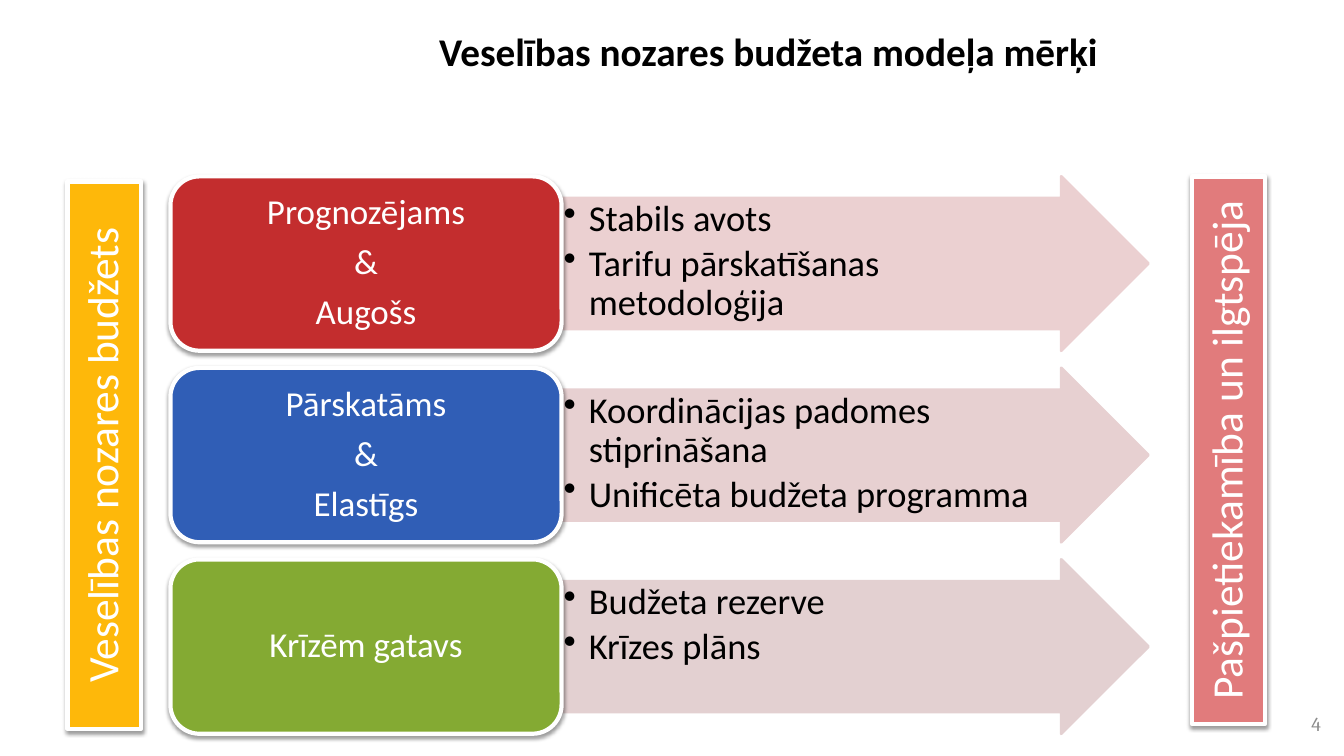
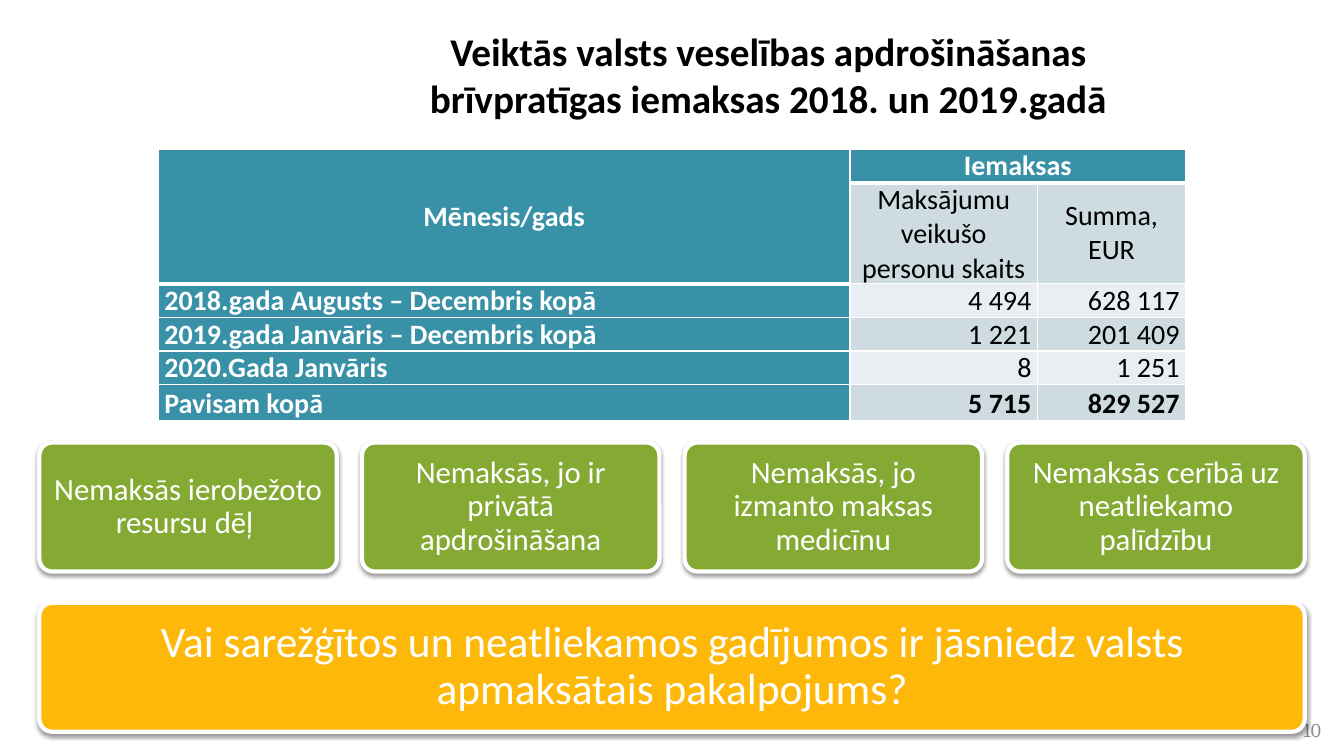
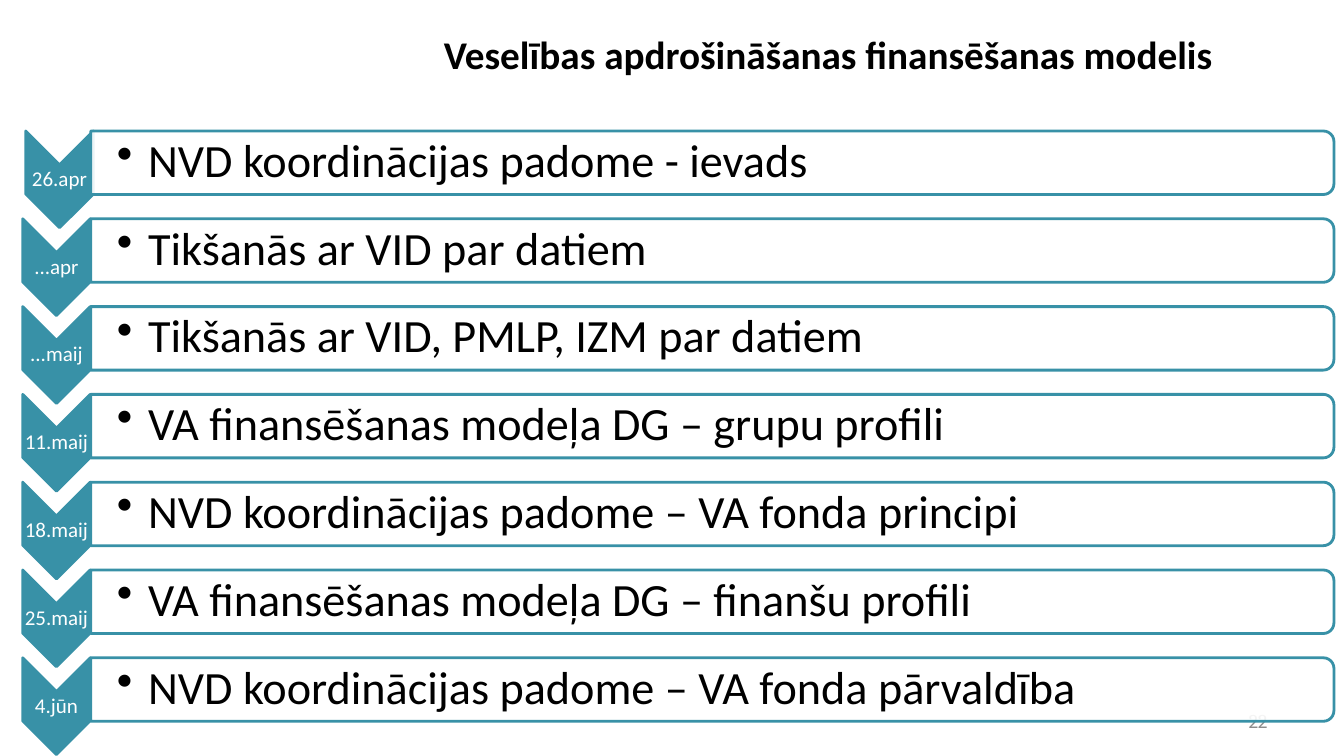
import pptx
import pptx.util
import pptx.dml.color
import pptx.enum.shapes
import pptx.enum.text
import pptx.oxml
import pptx.oxml.ns

Pt = pptx.util.Pt
KIND = pptx.enum.shapes.MSO_SHAPE
SIDE = pptx.enum.text.PP_ALIGN
HOLD = pptx.enum.text.MSO_ANCHOR
HUES = {
    "white": "FFFFFF", "black": "000000", "gray": "8C8C8C",
    "red": "C32D2E", "blue": "305EB6", "green": "84AA33",
    "gold": "FEB80A", "rose": "E17B7C", "teal": "3891A7",
    "mist": "CEDCE1", "pale": "E8EEF1",
    "blush": "EBD0D1", "dusk": "E7D0D1", "haze": "E3D0D1",
}
WIDE, HIGH, ROWS = 13.33, 7.5, 75


def cells(count):
    return pptx.util.Inches(count * HIGH / ROWS)


def hue(name):
    return pptx.dml.color.RGBColor.from_string(HUES[name])


def node(tag, parent, **attrs):
    item = pptx.oxml.parse_xml(f"<a:{tag} {pptx.oxml.ns.nsdecls('a')}/>")
    for key, value in attrs.items():
        item.set(key, str(value))
    if parent is not None:
        parent.append(item)
    return item


def write(frame, text, size=20, color="black", bold=False, face="Calibri",
          align=SIDE.LEFT, anchor=HOLD.TOP, pad=(1, 0.5, 1, 0.5),
          line=None, after=0, hang=0):
    frame.word_wrap = True
    frame.vertical_anchor = anchor
    frame.margin_left, frame.margin_top, frame.margin_right, frame.margin_bottom = map(cells, pad)
    for rank, part in enumerate(text.split("\n")):
        para = frame.add_paragraph() if rank else frame.paragraphs[0]
        if hang:
            prop = para._p.get_or_add_pPr()
            prop.set("marL", str(cells(hang)))
            prop.set("indent", str(-cells(hang)))
            node("buChar", prop, char="•")
        para.alignment = align
        if line:
            para.line_spacing = line
        if after:
            para.space_after = Pt(size * after)
        run = para.add_run()
        run.text = part
        run.font.size, run.font.bold, run.font.name = Pt(size), bold, face
        run.font.color.rgb = hue(color)


class Deck:
    label = dict(color="white", align=SIDE.CENTER, anchor=HOLD.MIDDLE, line=0.9, after=0.35)
    points = dict(line=0.9, after=0.15)

    def __init__(self):
        self.show = pptx.Presentation()
        self.show.slide_width = pptx.util.Inches(WIDE)
        self.show.slide_height = pptx.util.Inches(HIGH)
        self.slide = None

    def start(self):
        self.slide = self.show.slides.add_slide(self.show.slide_layouts[6])

    def text(self, box, words, **form):
        area = self.slide.shapes.add_textbox(*map(cells, box))
        write(area.text_frame, words, **form)

    def title(self, words, box=(34.2, 2.2, 84, 10.4)):
        self.text(box, words, size=28, bold=True, align=SIDE.CENTER)

    def number(self, words, left, top):
        self.text((left, top, 31.1, 4), words, size=14, color="gray", face="Cambria",
                  align=SIDE.RIGHT, anchor=HOLD.MIDDLE)

    def shape(self, kind, box, fill, edge, width=2, turn=0, adjust=(), clear=None):
        left, top, wide, high = box
        if turn:
            left, top = left + (wide - high) / 2, top + (high - wide) / 2
            wide, high = high, wide
        item = self.slide.shapes.add_shape(kind, *map(cells, (left, top, wide, high)))
        item.rotation = turn
        for rank, value in enumerate(adjust):
            item.adjustments[rank] = value
        item.shadow.inherit = False
        item.fill.solid()
        item.fill.fore_color.rgb = hue(fill)
        if clear:
            tone = item._element.spPr.find(".//" + pptx.oxml.ns.qn("a:srgbClr"))
            node("alpha", tone, val=clear * 1000)
        item.line.color.rgb = hue(edge)
        item.line.width = Pt(width)
        return item

    def card(self, kind, box, fill, words, size, pad, turn=0, adjust=()):
        item = self.shape(kind, box, fill, "white", 3, turn, adjust)
        glow = item._element.spPr.find(pptx.oxml.ns.qn("a:effectLst"))
        cast = node("outerShdw", glow, blurRad=Pt(3.1), dist=Pt(1.6), dir=5400000, rotWithShape=0)
        node("alpha", node("srgbClr", cast, val=HUES["black"]), val=38000)
        write(item.text_frame, words, size=size, pad=pad, **self.label)

    def arrow(self, box, fill, words):
        item = self.shape(KIND.RIGHT_ARROW, box, fill, fill, adjust=(0.75, 0.5))
        write(item.text_frame, words, size=26, pad=(0.2, 0.2, 4.5, 0.2), hang=2.5, **self.points)

    def step(self, left, top, date, words):
        self.shape(KIND.CHEVRON, (left, top, 6.7, 9.6), "teal", "teal", turn=90)
        self.text((left, top + 3.35, 6.7, 2.9), date, size=15, pad=(0.1,) * 4, **self.label)
        self.shape(KIND.ROUND_2_SAME_RECTANGLE, (9, top, 123.3, 6.3), "white", "teal",
                   turn=90, clear=90)
        self.text((9, top + 0.3, 123, 5.6), words, size=33, anchor=HOLD.MIDDLE,
                  pad=(2.6, 0.2, 0.2, 0.2), hang=3.1, **self.points)

    def border(self, cell, low):
        prop = cell._tc.get_or_add_tcPr()
        for rank, (side, width) in enumerate(zip("LRTB", (1, 1, 1, low))):
            edge = node("ln" + side, None, w=Pt(width))
            node("srgbClr", node("solidFill", edge), val=HUES["white"])
            prop.insert(rank, edge)

    def table(self, box, wides, highs, rows):
        grid = self.slide.shapes.add_table(len(highs), len(wides), *map(cells, box)).table
        grid.first_row = grid.horz_banding = False
        for column, wide in zip(grid.columns, wides):
            column.width = cells(wide)
        for row, high in zip(grid.rows, highs):
            row.height = cells(high)
        grid.cell(0, 0).merge(grid.cell(1, 0))
        grid.cell(0, 1).merge(grid.cell(0, 2))
        last = len(rows) - 1
        for down, row in enumerate(rows):
            for over, words in enumerate(row):
                cell = grid.cell(down, over)
                head = down == 0 or over == 0
                fill = "teal" if head else "mist" if down % 2 else "pale"
                cell.fill.solid()
                cell.fill.fore_color.rgb = hue(fill)
                self.border(cell, 3 if down == 0 or (down, over) == (1, 0) else 1)
                middle = down == 1 or (down, over) == (0, 0)
                cell.vertical_anchor = HOLD.MIDDLE if middle else HOLD.BOTTOM
                cell.margin_left = cell.margin_right = cells(0.6)
                cell.margin_top = cell.margin_bottom = 0
                if words:
                    align = SIDE.CENTER if down < 2 else SIDE.RIGHT if over else SIDE.LEFT
                    write(cell.text_frame, words, color="white" if head else "black",
                          bold=head or down == last, align=align, pad=(0.6, 0, 0.6, 0),
                          anchor=cell.vertical_anchor)


def goals(deck):
    deck.start()
    deck.title("Veselības nozares budžeta modeļa mērķi")
    lanes = [
        ("red", "blush", "Prognozējams\n&\nAugošs", "Stabils avots\nTarifu pārskatīšanas metodoloģija"),
        ("blue", "dusk", "Pārskatāms\n&\nElastīgs", "Koordinācijas padomes stiprināšana\nUnificēta budžeta programma"),
        ("green", "haze", "Krīzēm gatavs", "Budžeta rezerve\nKrīzes plāns"),
    ]
    for rank, (fill, tint, name, items) in enumerate(lanes):
        top = 17.5 + 19 * rank
        deck.arrow((55.7, top, 58.2, 17.3), tint, items)
        deck.card(KIND.ROUNDED_RECTANGLE, (16.9, top, 38.8, 17.3), fill, name, 25, (1, 0.5, 1, 0.5))
    bars = [
        (6.7, 18, "gold", "Veselības nozares budžets"),
        (118.2, 17.5, "rose", "Pašpietiekamība un ilgtspēja"),
    ]
    for left, top, fill, words in bars:
        deck.card(KIND.RECTANGLE, (left, top, 7.3, 54.3), fill, words, 31, (1.3,) * 4, turn=270)
    deck.number("4", 100.9, 69.8)


def funds(deck):
    deck.start()
    deck.number("10", 100.9, 70.4)
    deck.table((15.7, 14.8, 101.9, 26.3), (68.6, 18.6, 14.7), (3.2, 9.9, 3.2, 3.2, 3.2, 3.6), [
        ("Mēnesis/gads", "Iemaksas", ""),
        ("", "Maksājumu veikušo personu skaits", "Summa, EUR"),
        ("2018.gada Augusts – Decembris kopā", "4 494", "628 117"),
        ("2019.gada Janvāris – Decembris kopā", "1 221", "201 409"),
        ("2020.Gada Janvāris", "8", "1 251"),
        ("Pavisam kopā", "5 715", "829 527"),
    ])
    deck.title("Veiktās valsts veselības apdrošināšanas brīvpratīgas iemaksas 2018. un 2019.gadā")
    deck.card(KIND.ROUNDED_RECTANGLE, (3.9, 59.8, 125.5, 12.8), "gold",
              "Vai sarežģītos un neatliekamos gadījumos ir jāsniedz valsts apmaksātais pakalpojums?",
              31, (1.3,) * 4, adjust=(0.1,))
    causes = [
        "Nemaksās ierobežoto resursu dēļ ",
        "Nemaksās, jo ir privātā apdrošināšana",
        "Nemaksās, jo izmanto maksas medicīnu",
        "Nemaksās cerībā uz neatliekamo palīdzību",
    ]
    for rank, words in enumerate(causes):
        deck.card(KIND.ROUNDED_RECTANGLE, (3.9 + 32 * rank, 43.9, 29.5, 12.8), "green",
                  words, 22, (0.9,) * 4, adjust=(0.1,))


def plan(deck):
    deck.start()
    deck.title("Veselības apdrošināšanas finansēšanas modelis ", (41, 2.5, 83.1, 5.7))
    deck.number("22", 95.6, 69.5)
    steps = [
        ("26.apr", "NVD koordinācijas padome - ievads"),
        ("...apr", "Tikšanās ar VID par datiem"),
        ("...maij", "Tikšanās ar VID, PMLP, IZM par datiem"),
        ("11.maij", "VA finansēšanas modeļa DG – grupu profili"),
        ("18.maij", "NVD koordinācijas padome – VA fonda principi"),
        ("25.maij", "VA finansēšanas modeļa DG – finanšu profili"),
        ("4.jūn", "NVD koordinācijas padome – VA fonda pārvaldība"),
    ]
    for rank, (date, words) in enumerate(steps):
        deck.step(2.25 if rank else 2.55, 13 + 8.71 * rank, date, words)


def main():
    deck = Deck()
    for draw in (goals, funds, plan):
        draw(deck)
    deck.show.save("out.pptx")


if __name__ == "__main__":
    main()
